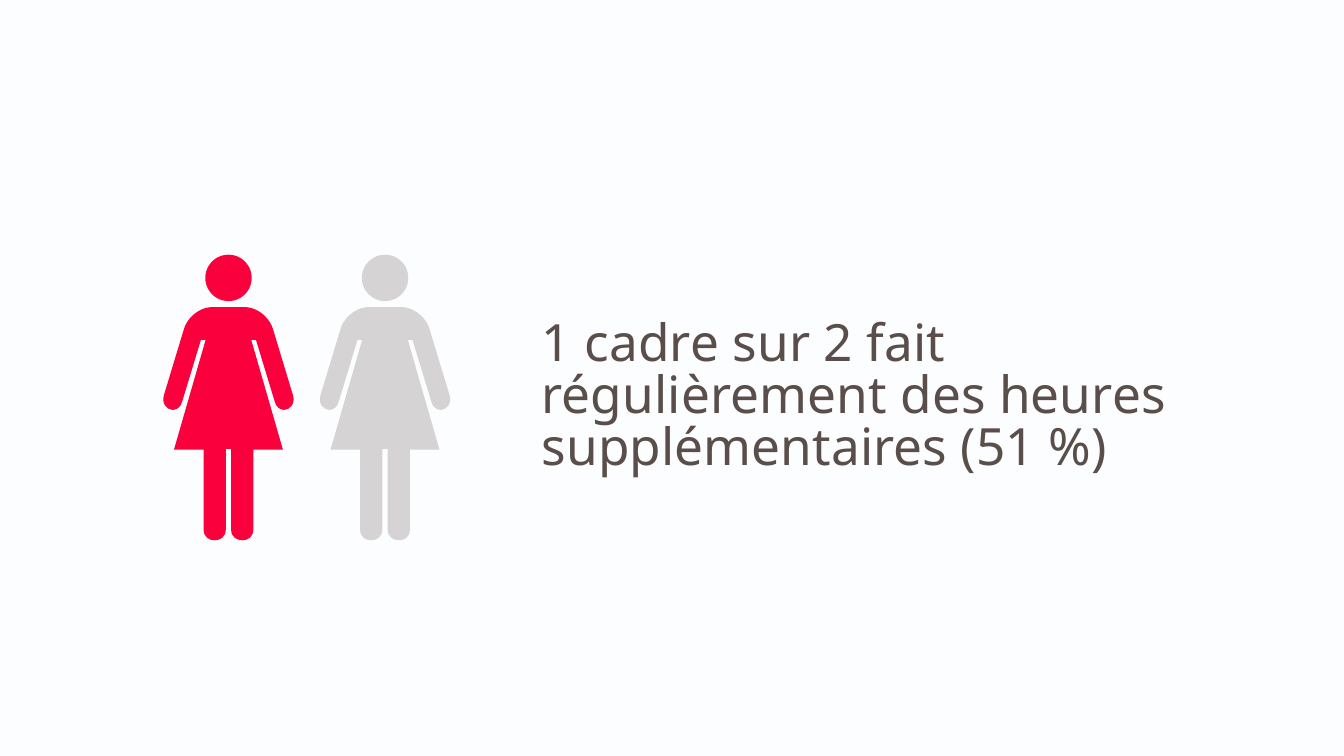
from lxml.etree import SubElement
from pptx import Presentation
from pptx.dml.color import RGBColor
from pptx.enum.shapes import MSO_SHAPE
from pptx.enum.text import MSO_ANCHOR, MSO_AUTO_SIZE, PP_ALIGN
from pptx.oxml.ns import qn
from pptx.util import Inches, Pt

COLORS = {
    "background": "FCFDFF",
    "highlight": "FA003C",
    "muted": "D5D3D3",
    "text": "594E49",
}
FONT = "Noto Sans"
COLUMNS, ROWS = 20, 11.25
TITLE_ONLY_LAYOUT = 5

# Right half of the body, from shoulder to legs: (across from the axis, down
# from the top of the head). Two points are a line, four are a Bézier curve.
HALF_BODY = [
    [(0.23, 0.78), (0.48, 0.78), (0.63, 0.99), (0.66, 1.10)],  # shoulder
    [(0.66, 1.10), (0.96, 2.09)],
    [(0.96, 2.09), (1.00, 2.22), (0.91, 2.31), (0.83, 2.31)],  # hand
    [(0.83, 2.31), (0.77, 2.31), (0.71, 2.27), (0.69, 2.19)],
    [(0.69, 2.19), (0.41, 1.27)],
    [(0.41, 1.27), (0.34, 1.27)],
    [(0.34, 1.27), (0.81, 2.90)],  # skirt
    [(0.81, 2.90), (0.37, 2.90)],
    [(0.37, 2.90), (0.37, 4.09)],
    [(0.37, 4.09), (0.37, 4.20), (0.29, 4.25), (0.21, 4.25)],  # foot
    [(0.21, 4.25), (0.12, 4.25), (0.04, 4.20), (0.04, 4.09)],
    [(0.04, 4.09), (0.04, 2.89)],
]
HEAD_SIZE = 0.69


def body_segments():
    """The right half, the line between the legs, and the mirrored left half."""
    mirrored = [
        [(-across, down) for across, down in reversed(segment)]
        for segment in reversed(HALF_BODY)
    ]
    return HALF_BODY + [[HALF_BODY[-1][-1], mirrored[0][0]]] + mirrored


class SlideBuilder:
    def __init__(self, presentation):
        self.column = presentation.slide_width / COLUMNS
        self.row = presentation.slide_height / ROWS
        self.slide = presentation.slides.add_slide(
            presentation.slide_layouts[TITLE_ONLY_LAYOUT]
        )
        background = self.slide.background.fill
        background.solid()
        background.fore_color.rgb = color("background")

    def place(self, column, row):
        return round(column * self.column), round(row * self.row)

    def paint(self, shape, fill):
        shape.shadow.inherit = False
        shape.fill.solid()
        shape.fill.fore_color.rgb = color(fill)
        shape.line.fill.background()

    def outline(self, shapes, segments, axis, top):
        """A closed freeform; runs of three control points become curves."""
        points = [segments[0][0]] + [point for part in segments for point in part[1:]]
        places = [self.place(axis + across, top + down) for across, down in points]
        builder = shapes.build_freeform(*places[0])
        builder.add_line_segments(places[1:], close=True)
        shape = builder.convert_to_shape()
        lines = iter(list(shape._element.iter(qn("a:lnTo"))))
        for segment in segments:
            steps = [next(lines) for _ in segment[1:]]
            if len(steps) == 3:
                curve = SubElement(steps[0].getparent(), qn("a:cubicBezTo"))
                steps[0].addprevious(curve)
                for step in steps:
                    curve.append(step[0])
                    step.getparent().remove(step)
        return shape

    def person(self, axis, top, fill):
        """A grouped figure, centred on the axis column."""
        shapes = self.slide.shapes.add_group_shape().shapes
        head = shapes.add_shape(
            MSO_SHAPE.OVAL,
            *self.place(axis - HEAD_SIZE / 2, top),
            *self.place(HEAD_SIZE, HEAD_SIZE),
        )
        body = self.outline(shapes, body_segments(), axis, top)
        for shape in (head, body):
            self.paint(shape, fill)

    def title(self, text, column, row, width, height):
        title = self.slide.shapes.title
        title.left, title.top = self.place(column, row)
        title.width, title.height = self.place(width, height)
        frame = title.text_frame
        frame.text = text
        frame.word_wrap = True
        frame.auto_size = MSO_AUTO_SIZE.SHAPE_TO_FIT_TEXT
        frame.vertical_anchor = MSO_ANCHOR.TOP
        frame.margin_left = frame.margin_right = 0
        frame.margin_top = frame.margin_bottom = 0
        paragraph = frame.paragraphs[0]
        paragraph.alignment = PP_ALIGN.LEFT
        paragraph.line_spacing = Pt(55.8)
        font = paragraph.runs[0].font
        font.name, font.size = FONT, Pt(55)
        font.color.rgb = color("text")
        # Letter spacing, in hundredths of a point
        paragraph.runs[0]._r.get_or_add_rPr().set("spc", "16")


def color(name):
    return RGBColor.from_string(COLORS[name])


def main():
    presentation = Presentation()
    presentation.slide_width = Inches(COLUMNS)
    presentation.slide_height = Inches(ROWS)
    builder = SlideBuilder(presentation)

    # One person out of two is highlighted
    for index, fill in enumerate(("highlight", "muted")):
        builder.person(3.4 + 2.33 * index, 3.79, fill)

    # Key statement
    builder.title(
        "1 cadre sur 2 fait régulièrement des heures supplémentaires (51 %)",
        8.06, 4.76, 10.3, 2.35,
    )
    presentation.save("out.pptx")


if __name__ == "__main__":
    main()
